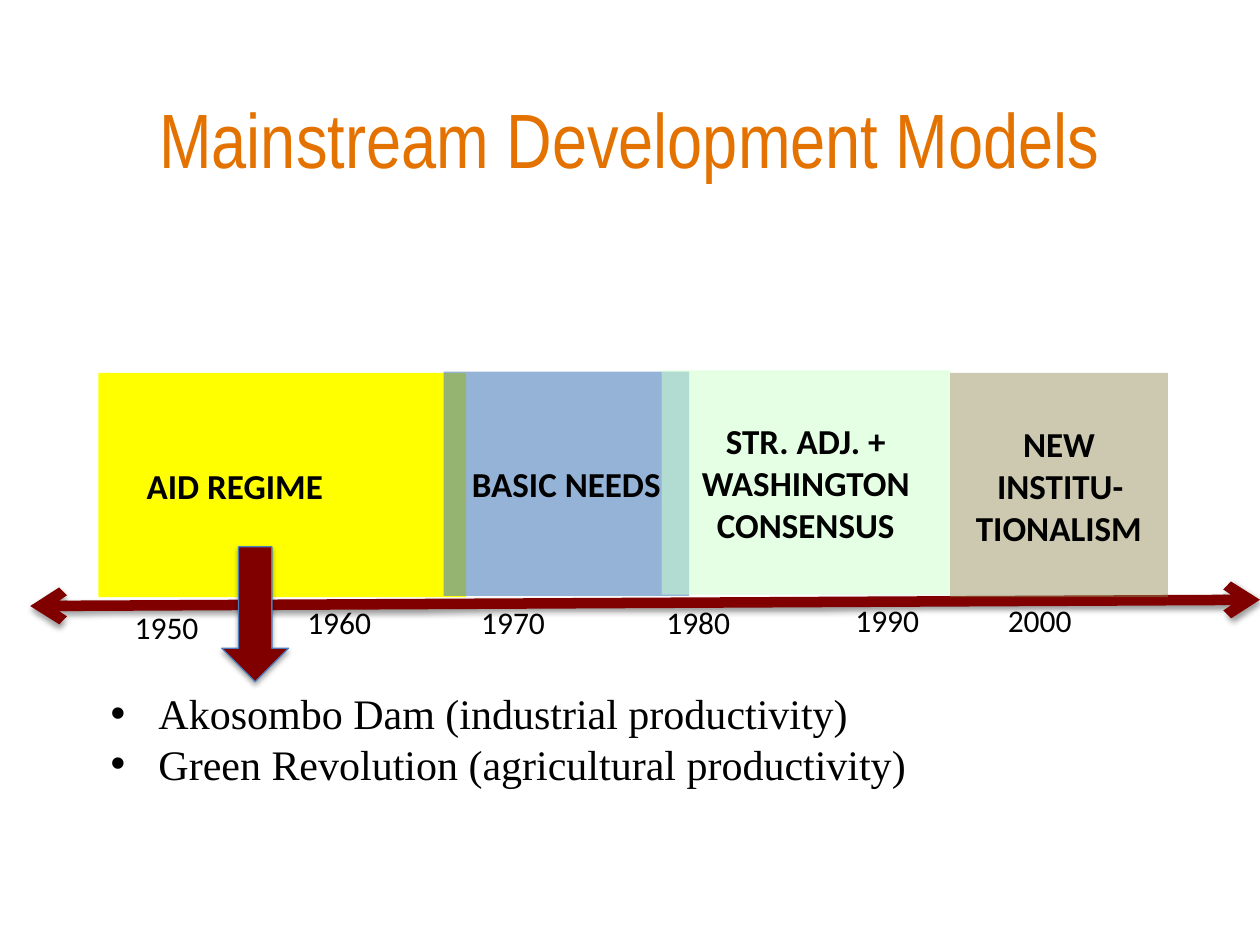
import pptx
import pptx.util
import pptx.dml.color
import pptx.enum.shapes
import pptx.enum.text
import pptx.oxml
import pptx.oxml.ns
from lxml import etree

Inches, Pt = pptx.util.Inches, pptx.util.Pt
RGBColor = pptx.dml.color.RGBColor
MSO_SHAPE = pptx.enum.shapes.MSO_SHAPE
MSO_ANCHOR = pptx.enum.text.MSO_ANCHOR
PP_ALIGN = pptx.enum.text.PP_ALIGN
qn = pptx.oxml.ns.qn

COLORS = {
    "title": "E47200", "text": "000000", "arrow": "800000", "arrow_edge": "4B7EBC",
    "aid": "FFFF00", "needs": "4F81BD", "adjustment": "CCFFCC", "institutions": "948A54",
}


def add_run(paragraph, text, font, size, color="text", bold=False):
    run = paragraph.add_run()
    run.text = text
    run.font.name = font
    run.font.size = Pt(size)
    run.font.bold = bold
    run.font.color.rgb = RGBColor.from_string(COLORS[color])


def add_shadow(shape, opacity, distance):
    """Cast a soft black shadow straight down; opacity in percent, distance in points."""
    effects = etree.SubElement(shape._element.spPr, qn("a:effectLst"))
    shadow = etree.SubElement(effects, qn("a:outerShdw"), blurRad=str(Pt(3.1)),
                              dist=str(Pt(distance)), dir="5400000", rotWithShape="0")
    black = etree.SubElement(shadow, qn("a:srgbClr"), val="000000")
    etree.SubElement(black, qn("a:alpha"), val=str(opacity * 1000))


presentation = pptx.Presentation()
presentation.slide_width, presentation.slide_height = Inches(10), Inches(7.5)
slide = presentation.slides.add_slide(presentation.slide_layouts[6])
shapes = slide.shapes

# Title
title = shapes.add_textbox(Inches(0.5), Inches(0.47), Inches(9), Inches(1.25)).text_frame
title.word_wrap = True
title.vertical_anchor = MSO_ANCHOR.MIDDLE
title.paragraphs[0].alignment = PP_ALIGN.CENTER
add_run(title.paragraphs[0], "Mainstream Development Models", "Arial Narrow", 44, "title")

# Time axis
axis = shapes.add_connector(pptx.enum.shapes.MSO_CONNECTOR.STRAIGHT,
                            Inches(0.24), Inches(4.81), Inches(10), Inches(4.76))
axis.line.color.rgb = RGBColor.from_string(COLORS["arrow"])
axis.line.width = Pt(6)
for end in ("a:headEnd", "a:tailEnd"):
    etree.SubElement(axis.line._get_or_add_ln(), qn(end), type="arrow")
add_shadow(axis, 38, 1.6)

# Decades: label, left, top
decades = [("1950", 0.97, 4.78), ("1960", 2.34, 4.74), ("1970", 3.72, 4.74),
           ("1980", 5.19, 4.74), ("1990", 6.69, 4.72), ("2000", 7.9, 4.72)]
for year, left, top in decades:
    label = shapes.add_textbox(Inches(left), Inches(top), Inches(0.85), Inches(0.4)).text_frame
    label.word_wrap = True
    add_run(label.paragraphs[0], year, "Calibri", 18)

# Eras: name, left, top, width, right inset, colour, opacity in percent
eras = [
    ("AID REGIME", 0.78, 2.96, 2.92, 0.85, "aid", 100),
    ("BASIC NEEDS", 3.52, 2.95, 1.95, 0.1, "needs", 60),
    ("STR. ADJ. + WASHINGTON CONSENSUS", 5.25, 2.94, 2.29, 0.1, "adjustment", 53),
    ("NEW INSTITU-TIONALISM", 7.54, 2.96, 1.73, 0.1, "institutions", 46),
]
for name, left, top, width, right_inset, color, opacity in eras:
    era = shapes.add_shape(MSO_SHAPE.RECTANGLE, Inches(left), Inches(top),
                           Inches(width), Inches(1.78))
    era.shadow.inherit = False
    era.line.fill.background()
    era.fill.solid()
    era.fill.fore_color.rgb = RGBColor.from_string(COLORS[color])
    if opacity < 100:
        fill_color = era._element.spPr.find(qn("a:solidFill"))[0]
        etree.SubElement(fill_color, qn("a:alpha"), val=str(opacity * 1000))
    frame = era.text_frame
    frame.word_wrap = True
    frame.margin_right = Inches(right_inset)
    frame.vertical_anchor = MSO_ANCHOR.MIDDLE
    frame.paragraphs[0].alignment = PP_ALIGN.CENTER
    add_run(frame.paragraphs[0], name, "Calibri", 20, bold=True)

# Examples from the aid regime
examples = shapes.add_textbox(Inches(0.78), Inches(5.41), Inches(6.57), Inches(0.91)).text_frame
examples.word_wrap = True
for index, example in enumerate(["Akosombo Dam (industrial productivity)",
                                 "Green Revolution (agricultural productivity)"]):
    paragraph = examples.add_paragraph() if index else examples.paragraphs[0]
    properties = paragraph._p.get_or_add_pPr()
    properties.set("marL", str(Inches(0.38)))
    properties.set("indent", str(-Inches(0.38)))
    etree.SubElement(properties, qn("a:buFont"), typeface="Arial")
    etree.SubElement(properties, qn("a:buChar"), char="•")
    add_run(paragraph, example, "Times New Roman", 24)

# Arrow from the aid regime down to its examples
arrow = shapes.add_shape(MSO_SHAPE.RIGHT_ARROW, Inches(1.49), Inches(4.61),
                         Inches(1.07), Inches(0.53))
arrow.rotation = 90
arrow.fill.solid()
arrow.fill.fore_color.rgb = RGBColor.from_string(COLORS["arrow"])
arrow.line.color.rgb = RGBColor.from_string(COLORS["arrow_edge"])
arrow.line.width = Pt(0.75)
add_shadow(arrow, 35, 1.8)

presentation.save("out.pptx")
